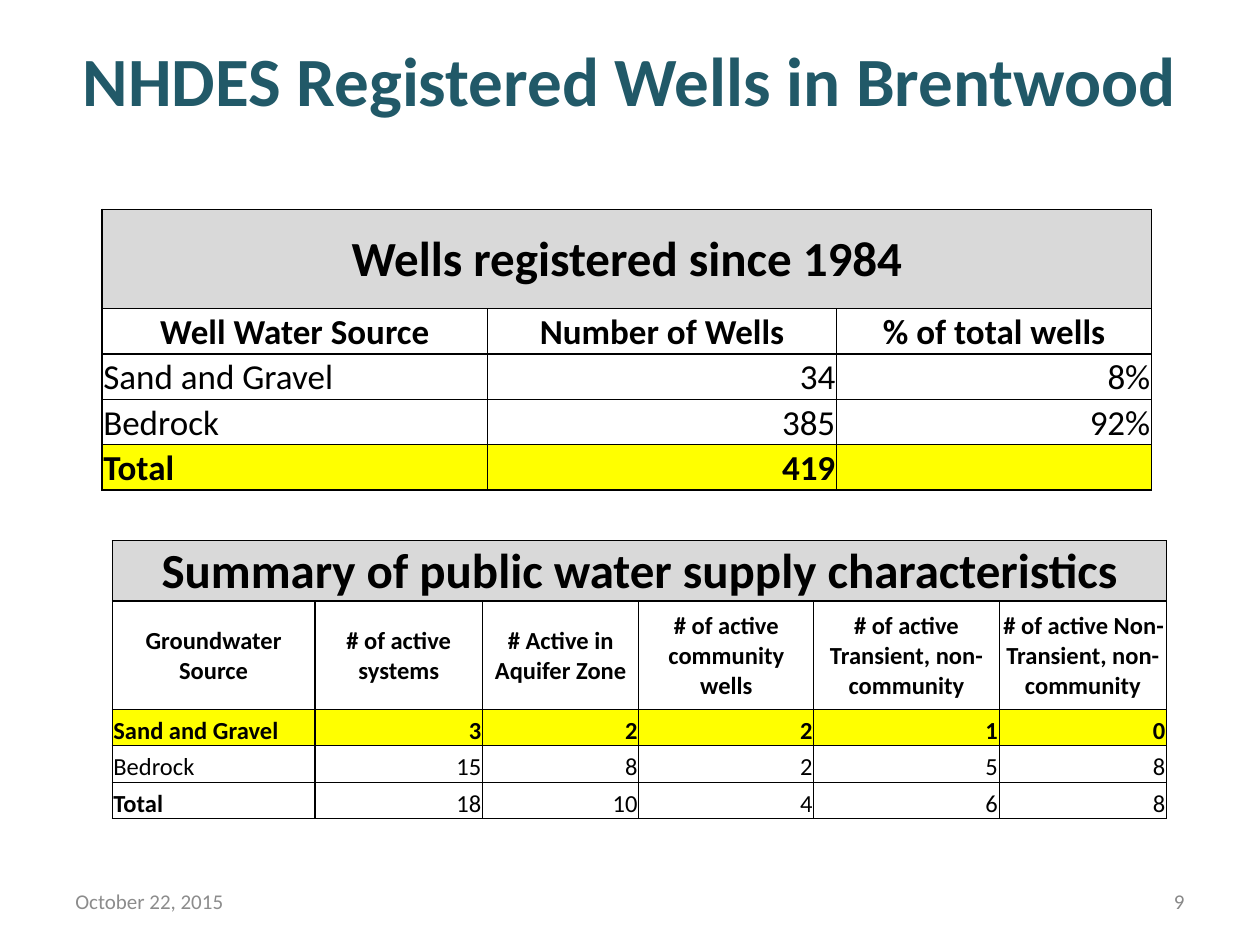
from lxml.etree import SubElement
from pptx import Presentation
from pptx.dml.color import RGBColor
from pptx.enum.text import MSO_ANCHOR, PP_ALIGN
from pptx.oxml.ns import qn
from pptx.util import Inches, Pt

FONT = "Calibri"
BLACK, GREY, YELLOW, TEAL = "000000", "D9D9D9", "FFFF00", "215968"
MARGIN = 0.5
FOOTER = {"top": 6.95, "width": 2.33, "height": 0.4}
LEFT, CENTER, RIGHT = PP_ALIGN.LEFT, PP_ALIGN.CENTER, PP_ALIGN.RIGHT


def color(hex_text):
    return RGBColor.from_string(hex_text)


def write(frame, text, size=12, ink=BLACK, bold=False, align=LEFT):
    para = frame.paragraphs[0]
    para.alignment = align
    span = para.add_run()
    span.text = text
    span.font.name = FONT
    span.font.size = Pt(size)
    span.font.bold = bold
    span.font.color.rgb = color(ink)


def add_text(page, box, text, anchor=MSO_ANCHOR.MIDDLE, inset=0.05, **style):
    frame = page.shapes.add_textbox(*map(Inches, box)).text_frame
    frame.word_wrap = True
    frame.vertical_anchor = anchor
    frame.margin_top = frame.margin_bottom = Inches(inset)
    write(frame, text, **style)


def add_borders(cell, width=0.75):
    properties = cell._tc.get_or_add_tcPr()
    for position, side in enumerate(("lnL", "lnR", "lnT", "lnB")):
        line = SubElement(properties, qn(f"a:{side}"), w=str(Pt(width)))
        fill = SubElement(line, qn("a:solidFill"))
        SubElement(fill, qn("a:srgbClr"), val=BLACK)
        properties.remove(line)
        properties.insert(position, line)


def format_cell(cell, fill, anchor):
    cell.margin_left = cell.margin_right = cell.margin_top = Inches(0.01)
    cell.margin_bottom = 0
    cell.vertical_anchor = anchor
    if fill:
        cell.fill.solid()
        cell.fill.fore_color.rgb = color(fill)
    else:
        cell.fill.background()
    add_borders(cell)


def add_data_table(page, origin, widths, heights, title, headings, records, size,
                   highlight, bold_cells, title_anchor, heading_anchor):
    """Grey title row over all columns, a heading row, then the records."""
    box = (*origin, sum(widths), sum(heights))
    table = page.shapes.add_table(len(heights), len(widths), *map(Inches, box)).table
    table.first_row = table.horz_banding = False
    for column, width in zip(table.columns, widths):
        column.width = Inches(width)
    for row, height in zip(table.rows, heights):
        row.height = Inches(height)

    for index in range(len(widths)):
        format_cell(table.cell(0, index), GREY, title_anchor)
    table.cell(0, 0).merge(table.cell(0, len(widths) - 1))
    write(table.cell(0, 0).text_frame, title, size=28, bold=True, align=CENTER)

    for index, heading in enumerate(headings):
        cell = table.cell(1, index)
        format_cell(cell, None, heading_anchor)
        write(cell.text_frame, heading, size=size, bold=True, align=CENTER)

    for number, record in enumerate(records):
        for index, value in enumerate(record):
            cell = table.cell(number + 2, index)
            marked = record[0] == highlight
            format_cell(cell, YELLOW if marked else None, MSO_ANCHOR.BOTTOM)
            write(cell.text_frame, value, size=size,
                  bold=marked or value in bold_cells,
                  align=RIGHT if index else LEFT)


def add_footer(page, page_width, date, number):
    top, width, height = FOOTER["top"], FOOTER["width"], FOOTER["height"]
    add_text(page, (MARGIN, top, width, height), date, ink="8C8C8C")
    add_text(page, (page_width - MARGIN - width, top, width, height), number,
             ink="888888", align=RIGHT)


def main():
    deck = Presentation()
    page_width = 10
    deck.slide_width, deck.slide_height = Inches(page_width), Inches(7.5)
    page = deck.slides.add_slide(deck.slide_layouts[6])

    add_text(page, (MARGIN, 0.3, page_width - 2 * MARGIN, 1.25),
             "NHDES Registered Wells in Brentwood", anchor=MSO_ANCHOR.TOP, inset=0,
             size=39.5, ink=TEAL, bold=True, align=CENTER)

    add_data_table(
        page, (0.81, 1.66), [3.06, 2.77, 2.5], [0.79] + [0.36] * 4,
        "Wells registered since 1984",
        ["Well Water Source", "Number of Wells", "% of total wells"],
        [["Sand and Gravel", "34", "8%"],
         ["Bedrock", "385", "92%"],
         ["Total", "419", ""]],
        size=20, highlight="Total", bold_cells=[],
        title_anchor=MSO_ANCHOR.MIDDLE, heading_anchor=MSO_ANCHOR.BOTTOM)

    add_data_table(
        page, (0.89, 4.29), [1.61, 1.33, 1.24, 1.39, 1.47, 1.33],
        [0.48, 0.86] + [0.29] * 3,
        "Summary of public water supply characteristics",
        ["Groundwater Source", "# of active systems", "# Active in Aquifer Zone",
         "# of active community wells", "# of active Transient, non-community",
         "# of active Non-Transient, non-community"],
        [["Sand and Gravel", "3", "2", "2", "1", "0"],
         ["Bedrock", "15", "8", "2", "5", "8"],
         ["Total", "18", "10", "4", "6", "8"]],
        size=14, highlight="Sand and Gravel", bold_cells=["Total"],
        title_anchor=MSO_ANCHOR.BOTTOM, heading_anchor=MSO_ANCHOR.MIDDLE)

    add_footer(page, page_width, "October 22, 2015", "9")
    deck.save("out.pptx")


if __name__ == "__main__":
    main()
